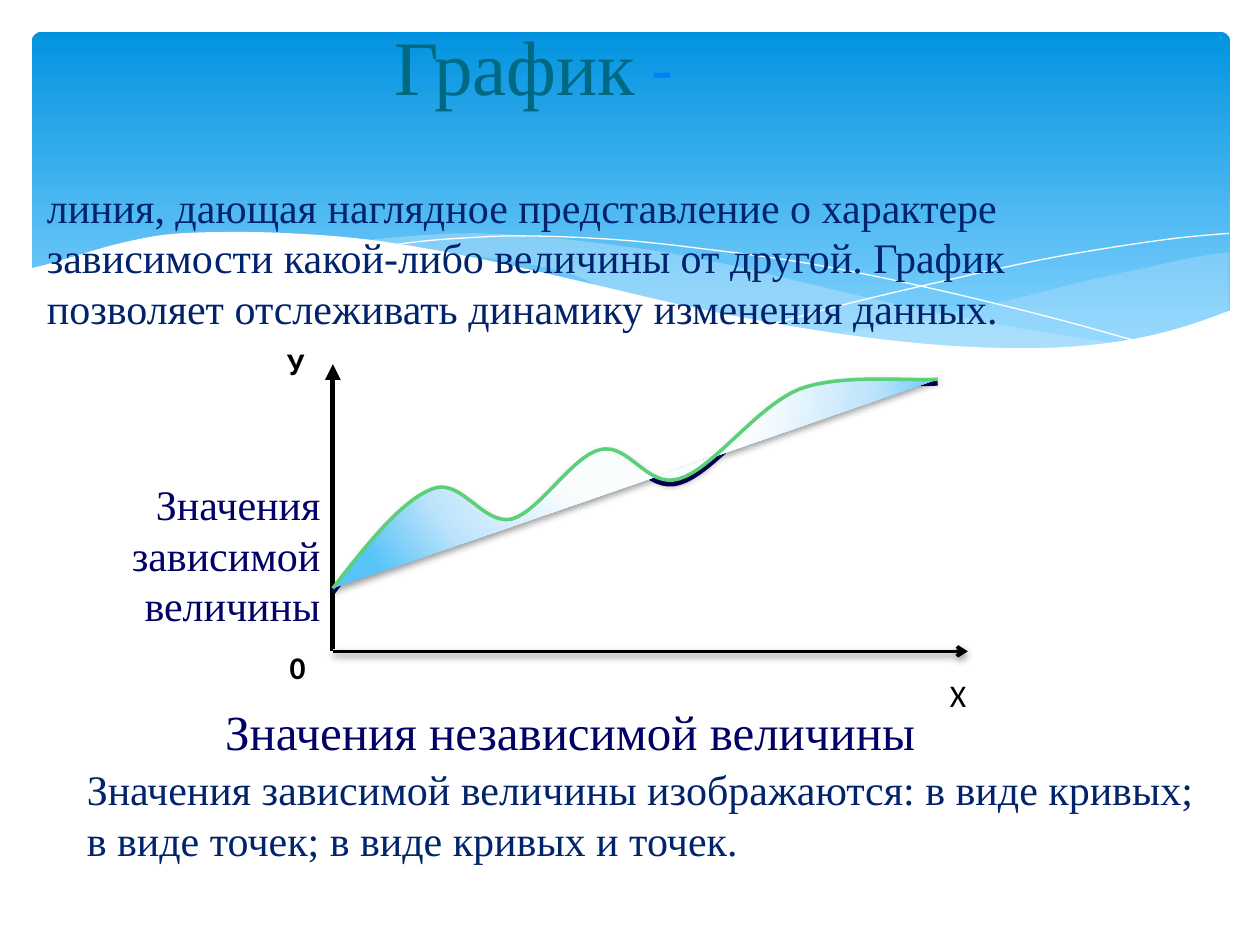
from itertools import chain

from lxml.etree import SubElement
from pptx import Presentation
from pptx.dml.color import RGBColor
from pptx.enum.shapes import MSO_CONNECTOR, MSO_SHAPE
from pptx.enum.text import MSO_ANCHOR, MSO_AUTO_SIZE, PP_ALIGN
from pptx.oxml.ns import qn
from pptx.util import Cm, Pt

WHITE = RGBColor(0xFF, 0xFF, 0xFF)
BLACK = RGBColor(0x00, 0x00, 0x00)
SKY_DEEP = RGBColor(0x02, 0x93, 0xE0)
SKY_LIGHT = RGBColor(0x83, 0xD3, 0xFE)
WAVE_BLUE = RGBColor(0xC6, 0xE7, 0xFC)
TEAL = RGBColor(0x00, 0x69, 0x82)
DASH_BLUE = RGBColor(0x00, 0x80, 0xFF)
TEXT_NAVY = RGBColor(0x00, 0x24, 0x6C)
NAVY = RGBColor(0x00, 0x00, 0x66)
GREEN = RGBColor(0x5B, 0xD0, 0x78)
CURVE_STOPS = [(40, RGBColor(0xFA, 0xFD, 0xFE)), (74, RGBColor(0xBE, 0xE4, 0xFC)),
               (100, RGBColor(0x58, 0xC3, 0xF6))]

SERIF = "Times New Roman"
HEADING = {"name": SERIF, "size": Pt(44)}
DASH = {"name": "Calibri", "size": Pt(40)}
BODY = {"name": SERIF, "size": Pt(24)}
AXIS_TITLE = {"name": SERIF, "size": Pt(28)}
AXIS_MARK = {"name": "Calibri", "size": Pt(18)}
AXIS_MARK_BOLD = {**AXIS_MARK, "bold": True}

UNIT = Cm(2.54) / 100  # grid step of the wave and curve points

# Wave edges on the banner grid
RIGHT_WAVE = [
    [(950, 175), (923, 179), (881, 188), (836, 198), (780, 212), (704, 228), (636, 240)],
    [(636, 240), (680, 247), (732, 251), (778, 253), (819, 252), (856, 249), (888, 244),
     (917, 237), (950, 222)]]
MIDDLE_WAVE = [
    [(868, 248), (812, 240), (750, 229), (681, 215), (604, 197), (544, 183), (489, 173),
     (417, 164), (355, 160), (303, 162), (261, 166)],
    [(261, 166), (317, 174), (379, 182), (424, 191), (466, 207), (541, 223), (609, 236),
     (670, 245), (723, 250), (771, 253), (823, 252), (868, 248)]]
WHITE_WAVE = [
    [(952, 221), (915, 234), (874, 244), (825, 250), (768, 251), (701, 247), (623, 237),
     (530, 220), (422, 195), (340, 177), (267, 165), (205, 160), (152, 159), (107, 161),
     (70, 168), (38, 177), (11, 185), (-2, 188)],
    [(-2, 304), (952, 304)]]
FALLING_THREAD = [(284, 170), (303, 167), (338, 164), (391, 162), (464, 165), (531, 172),
                  (611, 183), (702, 201), (806, 226), (882, 247)]
RISING_THREAD = [(588, 232), (647, 216), (723, 198), (811, 179), (899, 165), (950, 160)]

# Bezier nodes and handles of the graph on the plot grid
GRAPH = [(0, 178), (27, 143), (55, 108), (79, 99), (102, 90), (119, 128), (142, 123),
         (164, 117), (190, 73), (212, 68), (235, 62), (249, 99), (275, 91), (302, 83),
         (336, 34), (370, 20), (404, 7), (462, 14), (480, 12)]


def bezier(nodes, steps=16):
    """Points along a chain of cubic segments."""
    points = [nodes[0]]
    for i in range(0, len(nodes) - 1, 3):
        for t in (step / steps for step in range(1, steps + 1)):
            weights = ((1 - t) ** 3, 3 * t * (1 - t) ** 2, 3 * t * t * (1 - t), t ** 3)
            points.append(tuple(sum(w * node[axis] for w, node in zip(weights, nodes[i:i + 4]))
                                for axis in (0, 1)))
    return points


def smooth(edge):
    """A soft line through every point of the edge."""
    padded = [edge[0], *edge, edge[-1]]
    nodes = [edge[0]]
    for before, start, end, after in zip(padded, padded[1:], padded[2:], padded[3:]):
        nodes.append(tuple(s + (e - b) / 6 for b, s, e in zip(before, start, end)))
        nodes.append(tuple(e - (a - s) / 6 for s, e, a in zip(start, end, after)))
        nodes.append(end)
    return bezier(nodes, 6)


def child(parent, tag, **attributes):
    return SubElement(parent, qn(tag), {key: str(value) for key, value in attributes.items()})


def set_shadow(shape, visible=False):
    effects = child(shape._element.spPr, "a:effectLst")
    if visible:
        shadow = child(effects, "a:outerShdw", blurRad=Pt(4), dist=Pt(2), dir=5400000,
                       algn="ctr", rotWithShape=0)
        child(child(shadow, "a:srgbClr", val=BLACK), "a:alpha", val=38000)


def set_gradient(shape, stops):
    shape.fill.gradient()
    gradient = shape._element.spPr.find(qn("a:gradFill"))
    gradient.clear()
    stop_list = child(gradient, "a:gsLst")
    for position, color in stops:
        child(child(stop_list, "a:gs", pos=position * 1000), "a:srgbClr", val=color)
    return gradient


def add_outline(slide, origin, points, close=False, fill=None, alpha=100, line=None, width=0):
    spots = [(round(origin[0] + x * UNIT), round(origin[1] + y * UNIT)) for x, y in points]
    builder = slide.shapes.build_freeform(*spots[0], scale=1.0)
    builder.add_line_segments(spots[1:], close=close)
    outline = builder.convert_to_shape()
    if fill is None:
        outline.fill.background()
    else:
        outline.fill.solid()
        outline.fill.fore_color.rgb = fill
        color = outline._element.spPr.find(qn("a:solidFill")).find(qn("a:srgbClr"))
        child(color, "a:alpha", val=alpha * 1000)
    if line is None:
        outline.line.fill.background()
    else:
        outline.line.color.rgb = line
        outline.line.width = Pt(width)
    return outline


def add_run(paragraph, text, color, font_format):
    run = paragraph.add_run()
    run.text = text
    for attribute, value in font_format.items():
        setattr(run.font, attribute, value)
    run.font.color.rgb = color


def place(shape, box):
    for attribute, value in zip(("left", "top", "width", "height"), box):
        setattr(shape, attribute, Cm(value))


def add_label(slide, box, text, color, font_format, align=PP_ALIGN.LEFT):
    label = slide.shapes.add_textbox(*(Cm(value) for value in box))
    label.text_frame.word_wrap = True
    paragraph = label.text_frame.paragraphs[0]
    paragraph.alignment = align
    add_run(paragraph, text, color, font_format)


def add_axis(slide, start, end, color, width, head):
    axis = slide.shapes.add_connector(MSO_CONNECTOR.STRAIGHT, *(Cm(v) for v in (*start, *end)))
    axis.line.color.rgb = color
    axis.line.width = Pt(width)
    child(axis.line._get_or_add_ln(), "a:tailEnd", type=head)
    set_shadow(axis, visible=head == "arrow")


def draw_banner(slide, box):
    panel = slide.shapes.add_shape(MSO_SHAPE.ROUNDED_RECTANGLE, *(Cm(value) for value in box))
    panel.adjustments[0] = 0.03
    gradient = set_gradient(panel, [(0, SKY_DEEP), (90, SKY_LIGHT)])
    child(gradient, "a:lin", ang=5400000, scaled=0)
    panel.line.fill.background()
    set_shadow(panel)

    origin = Cm(box[0]), Cm(box[1])
    # Translucent waves, thin threads, then the white wave below
    for edges, fill, alpha in ((RIGHT_WAVE, WAVE_BLUE, 29), (MIDDLE_WAVE, WAVE_BLUE, 40)):
        points = list(chain.from_iterable(map(smooth, edges)))
        set_shadow(add_outline(slide, origin, points, True, fill, alpha))
    for thread in (FALLING_THREAD, RISING_THREAD):
        set_shadow(add_outline(slide, origin, smooth(thread), line=WHITE))
    points = list(chain.from_iterable(map(smooth, WHITE_WAVE)))
    set_shadow(add_outline(slide, origin, points, True, WHITE))


def fill_placeholder(slide, index, box, runs, anchor):
    holder = slide.placeholders[index]
    slide.shapes._spTree.append(holder._element)  # in front of the banner
    place(holder, box)
    frame = holder.text_frame
    for attribute, value in {"word_wrap": True, "auto_size": MSO_AUTO_SIZE.NONE,
                             "vertical_anchor": anchor}.items():
        setattr(frame, attribute, value)
    paragraph = frame.paragraphs[0]
    for attribute, value in {"alignment": PP_ALIGN.LEFT, "space_before": Pt(0)}.items():
        setattr(paragraph, attribute, value)
    properties = paragraph._p.get_or_add_pPr()
    properties.set("marL", "0")
    properties.set("indent", "0")
    child(properties, "a:buNone")
    for run in runs:
        add_run(paragraph, *run)


def draw_plot(slide, box):
    left, top, width, height = box
    bottom, right = top + height, left + width
    origin = Cm(left), Cm(top)
    curve = bezier(GRAPH)

    # Axis titles
    add_label(slide, (left - 2.42, top + 6.68, 16.21, 1.45), "Значения независимой величины",
              NAVY, AXIS_TITLE)
    add_label(slide, (left - 4.8, top + 2.19, 4.8, 3.33), "Значения зависимой величины",
              NAVY, BODY, PP_ALIGN.RIGHT)

    # Axes and the dark under-curve
    add_axis(slide, (left, bottom), (left, top), BLACK, 3, "triangle")
    lowered = [(x, y + 3) for x, y in curve]
    set_shadow(add_outline(slide, origin, lowered, line=NAVY, width=3))
    for color, weight, head in ((WHITE, 3, "triangle"), (BLACK, 2, "arrow")):
        add_axis(slide, (left, bottom), (right, bottom), color, weight, head)

    # Axis marks
    for dx, dy, mark_width, mark, font_format in ((-1.17, -0.53, 1.14, "У", AXIS_MARK_BOLD),
                                                  (12.19, 6.17, 0.61, "Х", AXIS_MARK),
                                                  (-1.12, 5.59, 1.09, "0", AXIS_MARK_BOLD)):
        add_label(slide, (left + dx, top + dy, mark_width, 1.02), mark, BLACK, font_format)

    # Shaded curve
    graph = add_outline(slide, origin, curve, line=GREEN, width=2)
    glow = child(set_gradient(graph, CURVE_STOPS), "a:path", path="circle")
    child(glow, "a:fillToRect", l=20000, t=-40000, r=20000, b=140000)
    set_shadow(graph, visible=True)


def main():
    deck = Presentation()
    deck.slide_width, deck.slide_height = Cm(25.4), Cm(19.05)
    slide = deck.slides.add_slide(deck.slide_layouts[1])
    draw_banner(slide, (0.64, 0.64, 24.16, 6.86))
    fill_placeholder(slide, 1, (0.69, 3.53, 23.39, 3.61), [
        ("линия, дающая наглядное представление о характере зависимости какой-либо величины "
         "от другой. График позволяет отслеживать динамику изменения данных.",
         TEXT_NAVY, BODY)], MSO_ANCHOR.TOP)
    fill_placeholder(slide, 0, (7.7, 0, 9.8, 2.59), [
        ("График", TEAL, HEADING), (" -", DASH_BLUE, DASH)], MSO_ANCHOR.MIDDLE)
    draw_plot(slide, (6.71, 7.34, 12.8, 5.79))
    add_label(slide, (1.5, 15.27, 23.22, 2.31),
              "Значения зависимой величины изображаются: в виде кривых; в виде точек; "
              "в виде кривых и точек.", TEXT_NAVY, BODY)
    deck.save("out.pptx")


if __name__ == "__main__":
    main()
